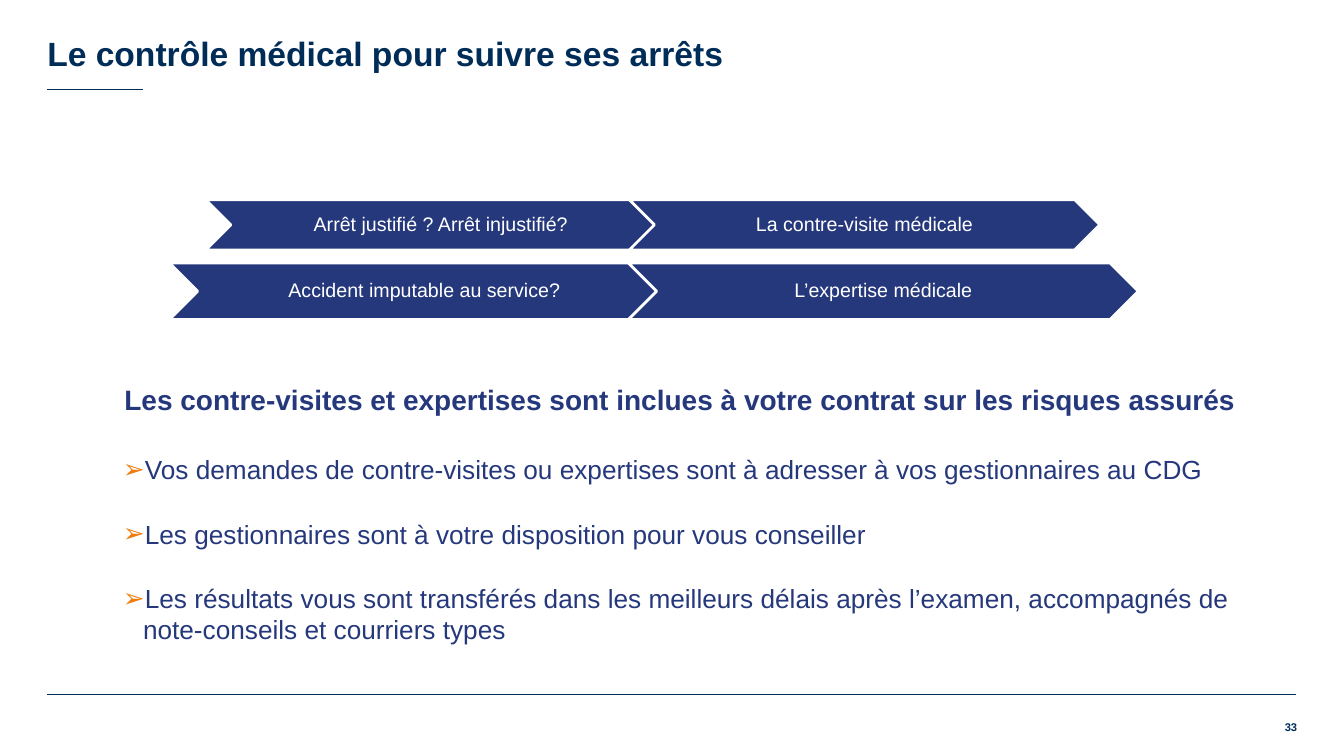
import pptx
import pptx.util
import pptx.dml.color
import pptx.enum.shapes
import pptx.enum.text
import pptx.oxml.ns
from lxml import etree

Pt = pptx.util.Pt
ALIGN = pptx.enum.text.PP_ALIGN
ANCHOR = pptx.enum.text.MSO_ANCHOR

# Content
TITLE = "Le contrôle médical pour suivre ses arrêts"
PAGE = "33"
HEAD = "Les contre-visites et expertises sont inclues à votre contrat sur les risques assurés"
POINTS = [
    "Vos demandes de contre-visites ou expertises sont à adresser à vos gestionnaires au CDG",
    "Les gestionnaires sont à votre disposition pour vous conseiller",
    "Les résultats vous sont transférés dans les meilleurs délais après l’examen, "
    "accompagnés de note-conseils et courriers types",
]
# Each row: left, top, width, height, labels
ROWS = [
    (146.9, 142.6, 336.2, 36, ("Arrêt justifié ? Arrêt injustifié?", "La contre-visite médicale")),
    (121, 187.9, 364.3, 40.3, ("Accident imputable au service?", "L’expertise médicale")),
]
# Each rule: left, right, height on the page
RULES = [(33.8, 925.9, 496.1), (33.8, 102.2, 64.1)]

THEME = {
    "font": "Arial",
    "navy": "002C58", "blue": "25387C", "orange": "EF7D0B", "white": "FFFFFF",
    "title": 24, "head": 20, "body": 18.7, "step": 14, "page": 8,
}
STEP = 0.9      # distance between chevrons, as a share of their width
HANG = 14.4


def color(name):
    return pptx.dml.color.RGBColor.from_string(THEME[name])


def style(para, size, tint, bold=False, align=ALIGN.LEFT):
    para.alignment = align
    for run in para.runs:
        font = run.font
        font.name, font.size, font.bold = THEME["font"], Pt(THEME[size]), bold
        font.color.rgb = color(tint)


def setup(frame, anchor):
    frame.word_wrap = True
    frame.vertical_anchor = anchor
    frame.margin_left = frame.margin_right = frame.margin_top = frame.margin_bottom = 0
    return frame


def add_box(slide, left, top, width, height, text, anchor=ANCHOR.TOP):
    box = slide.shapes.add_textbox(Pt(left), Pt(top), Pt(width), Pt(height))
    frame = setup(box.text_frame, anchor)
    frame.text = text
    return frame


def add_rule(slide, left, right, y):
    line = slide.shapes.add_connector(
        pptx.enum.shapes.MSO_CONNECTOR.STRAIGHT, Pt(left), Pt(y), Pt(right), Pt(y))
    line.line.color.rgb = color("navy")
    line.line.width = Pt(0.5)
    etree.SubElement(line._element.spPr, pptx.oxml.ns.qn("a:effectLst"))


def add_step(slide, left, top, width, height, text):
    step = slide.shapes.add_shape(
        pptx.enum.shapes.MSO_SHAPE.CHEVRON, Pt(left), Pt(top), Pt(width), Pt(height))
    step.shadow.inherit = False
    step.fill.solid()
    step.fill.fore_color.rgb = color("blue")
    step.line.color.rgb = color("white")
    step.line.width = Pt(2)
    frame = setup(step.text_frame, ANCHOR.MIDDLE)
    frame.text = text
    para = frame.paragraphs[0]
    para.line_spacing = 0.9
    style(para, "step", "white", align=ALIGN.CENTER)


def add_bullet(para):
    qn = pptx.oxml.ns.qn
    props = para._p.get_or_add_pPr()
    props.set("marL", str(Pt(HANG)))
    props.set("indent", str(-Pt(HANG)))
    tint = etree.SubElement(props, qn("a:buClr"))
    etree.SubElement(tint, qn("a:srgbClr"), val=THEME["orange"])
    etree.SubElement(props, qn("a:buFont"), typeface=THEME["font"])
    etree.SubElement(props, qn("a:buChar"), char="➢")


def main():
    deck = pptx.Presentation()
    deck.slide_width, deck.slide_height = Pt(960), Pt(540)
    slide = deck.slides.add_slide(deck.slide_layouts[6])

    # Rules
    for rule in RULES:
        add_rule(slide, *rule)

    # Heading and bullet points
    frame = add_box(slide, 87.8, 270, 796.3, 200.2, HEAD)
    frame.margin_top = Pt(3)
    style(frame.paragraphs[0], "head", "blue", True, ALIGN.CENTER)
    for i, text in enumerate(POINTS):
        para = frame.add_paragraph()
        para.text = text
        add_bullet(para)
        para.space_before = Pt(23.5 if i else 27)
        style(para, "body", "blue")

    # Chevron rows
    for left, top, width, height, labels in ROWS:
        for i, text in enumerate(labels):
            add_step(slide, left + i * STEP * width, top, width, height, text)

    # Title and page number
    frame = add_box(slide, 33.8, 0, 892.1, 52.6, TITLE, ANCHOR.BOTTOM)
    style(frame.paragraphs[0], "title", "navy", True)
    frame = add_box(slide, 898.6, 514.8, 28, 14.4, PAGE)
    style(frame.paragraphs[0], "page", "navy", True, ALIGN.RIGHT)

    deck.save("out.pptx")


if __name__ == "__main__":
    main()
